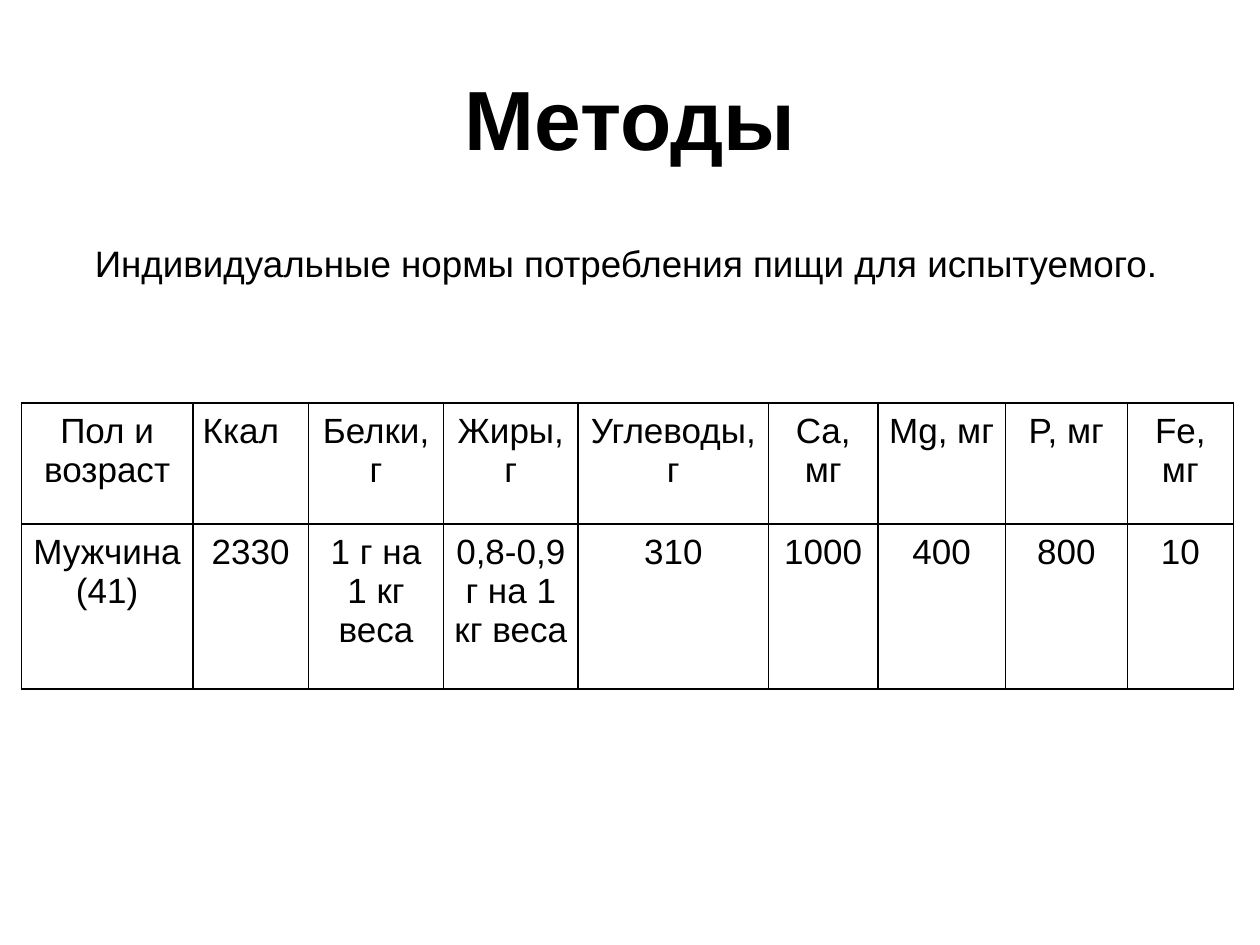
"""Build the "Методы" slide with a table of individual food intake norms."""
from lxml.etree import SubElement
from pptx import Presentation
from pptx.dml.color import RGBColor
from pptx.enum.text import MSO_ANCHOR, PP_ALIGN
from pptx.oxml.ns import qn
from pptx.util import Inches, Pt

BLACK = RGBColor(0, 0, 0)
WHITE = RGBColor(255, 255, 255)
FONT = "Arial"

TITLE = "Методы"
SUBTITLE = "Индивидуальные нормы потребления пищи для испытуемого."
NORMS = [
    ("Пол и возраст", 1.36, "Мужчина (41)"),
    ("Ккал  ", 0.92, "2330"),
    ("Белки, г", 1.07, "1 г на 1 кг веса"),
    ("Жиры, г", 1.07, "0,8-0,9 г на 1 кг веса"),
    ("Углеводы, г", 1.51, "310"),
    ("Са, мг", 0.87, "1000"),
    ("Mg, мг", 1.01, "400"),
    ("P, мг", 0.97, "800"),
    ("Fe, мг", 0.84, "10"),
]
ROW_HEIGHTS = (0.96, 1.31)
TABLE_LEFT, TABLE_TOP = 0.17, 3.2
CELL_MARGIN = Inches(0.07)


def write(tf, text, size=20, bold=False):
    p = tf.paragraphs[0]
    p.alignment = PP_ALIGN.CENTER
    r = p.add_run()
    r.text = text
    r.font.name = FONT
    r.font.size = Pt(size)
    r.font.bold = bold
    r.font.color.rgb = BLACK


def add_text(s, text, box, anchor=MSO_ANCHOR.TOP, **style):
    tf = s.shapes.add_textbox(*map(Inches, box)).text_frame
    tf.word_wrap = True
    tf.vertical_anchor = anchor
    write(tf, text, **style)


def add_borders(cell):
    props = cell._tc.get_or_add_tcPr()
    for i, side in enumerate(("lnL", "lnR", "lnT", "lnB")):
        ln = props.makeelement(qn(f"a:{side}"), {"w": str(Pt(1))})
        fill = SubElement(ln, qn("a:solidFill"))
        SubElement(fill, qn("a:srgbClr"), val=str(BLACK))
        props.insert(i, ln)


def add_norms(s):
    width = sum(w for _, w, _ in NORMS)
    box = (TABLE_LEFT, TABLE_TOP, width, sum(ROW_HEIGHTS))
    table = s.shapes.add_table(
        len(ROW_HEIGHTS), len(NORMS), *map(Inches, box)
    ).table
    table.first_row = table.horz_banding = False
    for row, height in zip(table.rows, ROW_HEIGHTS):
        row.height = Inches(height)
    for c, (header, col_width, value) in enumerate(NORMS):
        table.columns[c].width = Inches(col_width)
        for r, text in enumerate((header, value)):
            cell = table.cell(r, c)
            cell.margin_left = cell.margin_right = CELL_MARGIN
            cell.margin_top = cell.margin_bottom = CELL_MARGIN
            cell.fill.solid()
            cell.fill.fore_color.rgb = WHITE
            add_borders(cell)
            write(cell.text_frame, text)


def main():
    prs = Presentation()
    prs.slide_width, prs.slide_height = Inches(10), Inches(7.5)
    s = prs.slides.add_slide(prs.slide_layouts[6])
    add_text(s, TITLE, (0.5, 0.3, 9, 1.25), MSO_ANCHOR.MIDDLE, size=48, bold=True)
    add_norms(s)
    add_text(s, SUBTITLE, (0.31, 1.86, 9.32, 0.77), size=21)
    prs.save("out.pptx")


if __name__ == "__main__":
    main()
